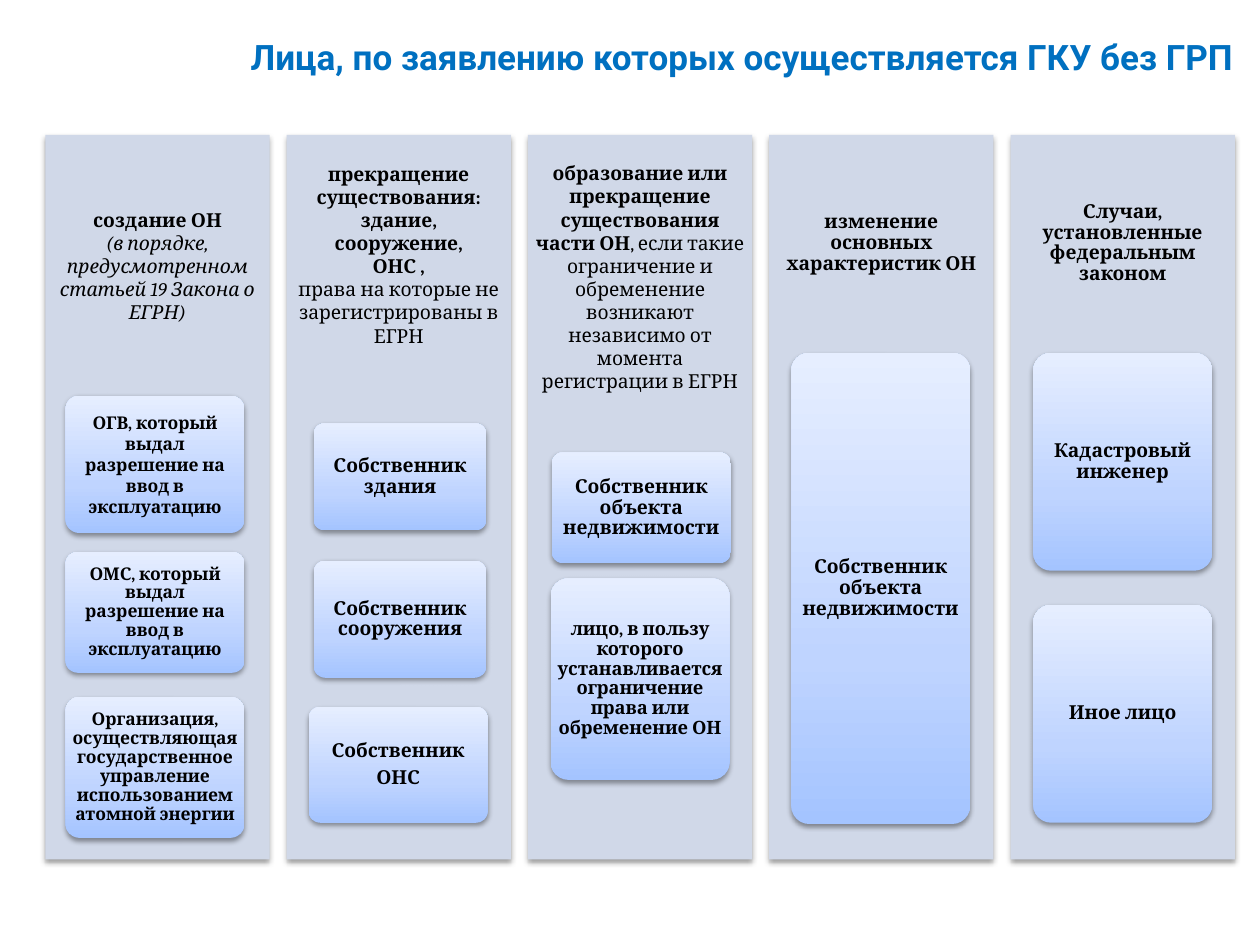
from copy import deepcopy

from lxml.etree import SubElement
from pptx import Presentation
from pptx.dml.color import RGBColor
from pptx.enum.shapes import MSO_SHAPE
from pptx.enum.text import MSO_ANCHOR, PP_ALIGN
from pptx.oxml.ns import qn
from pptx.util import Inches, Pt

BLACK = RGBColor(0x00, 0x00, 0x00)
TITLE_BLUE = RGBColor(0x00, 0x70, 0xC0)
PANEL_FILL = RGBColor(0xD0, 0xD8, 0xE8)
CARD_STOPS = [
    (0, RGBColor(0xA4, 0xC4, 0xFF)),
    (0.35, RGBColor(0xBF, 0xD4, 0xFF)),
    (1, RGBColor(0xE6, 0xEE, 0xFF)),
]

# Column geometry in inches
PANEL_LEFT, PANEL_TOP, PANEL_STEP = 0.36, 1.07, 1.915
PANEL_WIDTH, PANEL_HEIGHT = 1.78, 5.75
HEADING_HEIGHT = 1.72
CARD_WIDTH = 1.42


def write_text(shape, paragraphs, size=11, font="Cambria", color=BLACK,
               align=PP_ALIGN.CENTER, spacing=1.0, gap=0, inset=0.0):
    """Each paragraph is a bold string or a list of (text, bold, italic) runs."""
    frame = shape.text_frame
    frame.word_wrap = True
    frame.vertical_anchor = MSO_ANCHOR.MIDDLE
    frame.margin_left = frame.margin_right = Inches(inset)
    frame.margin_top = frame.margin_bottom = Inches(inset)
    for index, content in enumerate(paragraphs):
        paragraph = frame.add_paragraph() if index else frame.paragraphs[0]
        paragraph.alignment = align
        paragraph.line_spacing = spacing
        if index:
            paragraph.space_before = Pt(gap)
        runs = [(content, True, False)] if isinstance(content, str) else content
        for text, bold, italic in runs:
            run = paragraph.add_run()
            run.text = text
            run.font.size = Pt(size)
            run.font.name = font
            run.font.bold = bold
            run.font.italic = italic
            run.font.color.rgb = color


def add_shadow(effects, blur, distance, direction, opacity):
    shadow = SubElement(effects, qn("a:outerShdw"), blurRad=str(Pt(blur)),
                        dist=str(Pt(distance)), dir=str(direction * 60000),
                        rotWithShape="0")
    color = SubElement(shadow, qn("a:srgbClr"), val=str(BLACK))
    SubElement(color, qn("a:alpha"), val=str(opacity * 1000))


class SlideBuilder:
    def __init__(self, slide):
        self.slide = slide

    def text_box(self, left, top, width, height, paragraphs, **text_format):
        box = self.slide.shapes.add_textbox(
            Inches(left), Inches(top), Inches(width), Inches(height))
        write_text(box, paragraphs, **text_format)
        return box

    def block(self, kind, left, top, width, height):
        shape = self.slide.shapes.add_shape(
            kind, Inches(left), Inches(top), Inches(width), Inches(height))
        shape.line.fill.background()
        shape.shadow.inherit = False
        effects = shape._element.spPr.find(qn("a:effectLst"))
        add_shadow(effects, blur=3.1, distance=1.6, direction=90, opacity=38)
        return shape

    def title(self, text):
        box = self.text_box(0.83, 0.13, 9.06, 0.63, [text], size=20, font="Roboto",
                            color=TITLE_BLUE, align=PP_ALIGN.RIGHT, inset=0.1)
        properties = box.text_frame.paragraphs[0].runs[0].font._element
        effects = SubElement(properties, qn("a:effectLst"))
        add_shadow(effects, blur=3, distance=3, direction=45, opacity=43)
        properties.find(qn("a:solidFill")).addnext(effects)

    def panel(self, left):
        panel = self.block(MSO_SHAPE.RECTANGLE, left, PANEL_TOP,
                           PANEL_WIDTH, PANEL_HEIGHT)
        panel.fill.solid()
        panel.fill.fore_color.rgb = PANEL_FILL

    def heading(self, left, paragraphs, extra_height, spacing):
        self.text_box(left, PANEL_TOP, PANEL_WIDTH, HEADING_HEIGHT + extra_height,
                      paragraphs, spacing=spacing, inset=0.05)

    def card(self, left, top, height, paragraphs, width=CARD_WIDTH, **text_format):
        card = self.block(MSO_SHAPE.ROUNDED_RECTANGLE, left, top, width, height)
        card.adjustments[0] = 0.1
        card.fill.gradient()
        card.fill.gradient_angle = 90
        stop_list = card._element.spPr.find(".//" + qn("a:gsLst"))
        stop_list.append(deepcopy(stop_list[0]))
        for stop, (position, color) in zip(card.fill.gradient_stops, CARD_STOPS):
            stop.position = position
            stop.color.rgb = color
        write_text(card, paragraphs, **{"spacing": 0.9, **text_format})


# Each column: heading, extra heading height, line spacing, cards
# Each card: left, top, height, paragraphs, format
COLUMNS = [
    (["создание ОН",
      [("(в порядке, предусмотренном статьей 19 Закона о ЕГРН)", False, True)]],
     0.36, 1.0,
     [(0.52, 3.14, 1.09, ["ОГВ, который выдал разрешение на ввод в эксплуатацию"],
       {"size": 10, "spacing": 1.0}),
      (0.52, 4.38, 0.96, ["ОМС, который выдал разрешение на ввод в эксплуатацию"],
       {"size": 10}),
      (0.52, 5.53, 1.12, ["Организация, осуществляющая государственное "
                          "управление использованием атомной энергии"],
       {"size": 10})]),
    (["прекращение существования:", "здание,", "сооружение,", "ОНС ,",
      [("права на которые не зарегистрированы в ЕГРН", False, False)]],
     0.18, 1.0,
     [(2.49, 3.36, 0.85, ["Собственник", "здания"], {"width": 1.37}),
      (2.49, 4.45, 0.93, ["Собственник сооружения"], {"width": 1.37}),
      (2.45, 5.61, 0.92, ["Собственник", "ОНС"], {"gap": 4})]),
    ([[("образование или прекращение существования части ОН", True, False),
       (", если такие ограничение и обременение возникают независимо "
        "от момента регистрации в ЕГРН", False, False)]],
     0.54, 1.0,
     [(4.38, 3.59, 0.88, ["Собственник объекта недвижимости"], {}),
      (4.37, 4.59, 1.6, ["лицо, в пользу которого устанавливается "
                         "ограничение права или обременение ОН"],
       {"size": 10.5})]),
    (["изменение основных характеристик ОН"], 0, 0.9,
     [(6.28, 2.8, 3.74, ["Собственник объекта недвижимости"], {})]),
    (["Случаи, установленные федеральным законом"], 0, 0.9,
     [(8.2, 2.8, 1.73, ["Кадастровый инженер"], {}),
      (8.2, 4.8, 1.73, ["Иное лицо"], {})]),
]


def main():
    presentation = Presentation()
    presentation.slide_width = Inches(10)
    presentation.slide_height = Inches(7.5)
    builder = SlideBuilder(presentation.slides.add_slide(presentation.slide_layouts[6]))

    # Columns with their cards
    for index, (heading, extra_height, spacing, cards) in enumerate(COLUMNS):
        left = PANEL_LEFT + index * PANEL_STEP
        builder.panel(left)
        builder.heading(left, heading, extra_height, spacing)
        for card_left, top, height, paragraphs, text_format in cards:
            builder.card(card_left, top, height, paragraphs, **text_format)

    # Title
    builder.title("Лица, по заявлению которых осуществляется ГКУ без ГРП")

    presentation.save("out.pptx")


if __name__ == "__main__":
    main()
